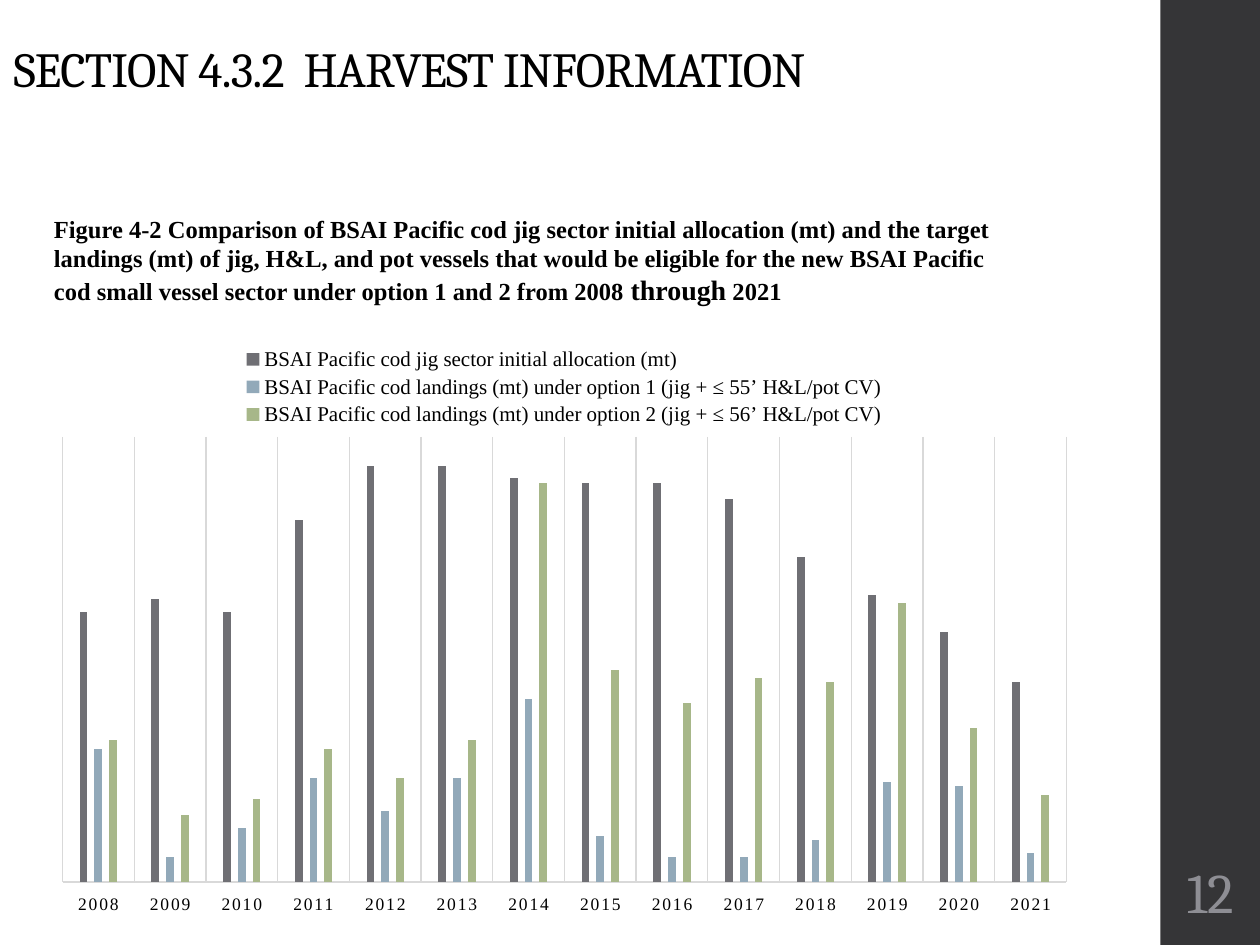
from dataclasses import dataclass

from lxml.etree import SubElement
from pptx import Presentation
from pptx.chart.data import CategoryChartData
from pptx.dml.color import RGBColor
from pptx.enum.chart import XL_CHART_TYPE as ChartType
from pptx.enum.chart import XL_LEGEND_POSITION as LegendPos
from pptx.enum.chart import XL_TICK_LABEL_POSITION as LabelPos
from pptx.enum.chart import XL_TICK_MARK as TickMark
from pptx.enum.shapes import MSO_SHAPE as Shape
from pptx.enum.text import MSO_ANCHOR as Anchor
from pptx.enum.text import PP_ALIGN as Align
from pptx.oxml import parse_xml
from pptx.oxml.ns import nsdecls, qn
from pptx.util import Inches, Pt


@dataclass(frozen=True)
class Theme:
    heading: str = "Cambria"
    body: str = "Times New Roman"
    ink: str = "000000"
    sidebar: str = "353537"
    muted: str = "8E8E94"
    grid: str = "D9D9D9"
    series: tuple = ("6F6F74", "92A9B9", "A7B789")
    title_size: int = 28
    number_size: int = 32
    caption_size: int = 14
    caption_large: int = 16
    legend_size: int = 12
    axis_size: int = 10


THEME = Theme()

YEARS = [str(year) for year in range(2008, 2022)]
SERIES = {
    "BSAI Pacific cod jig sector initial allocation (mt)":
        (65, 68, 65, 87, 100, 100, 97, 96, 96, 92, 78, 69, 60, 48),
    "BSAI Pacific cod landings (mt) under option 1 (jig + ≤ 55’ H&L/pot CV)":
        (32, 6, 13, 25, 17, 25, 44, 11, 6, 6, 10, 24, 23, 7),
    "BSAI Pacific cod landings (mt) under option 2 (jig + ≤ 56’ H&L/pot CV)":
        (34, 16, 20, 32, 25, 34, 96, 51, 43, 49, 48, 67, 37, 21),
}
CAPTION = (
    ("Figure 4-2 Comparison of BSAI Pacific cod jig sector initial allocation (mt) "
     "and the target landings (mt) of jig, H&L, and pot vessels that would be "
     "eligible for the new BSAI Pacific cod small vessel sector under option 1 "
     "and 2 from 2008 ", THEME.caption_size),
    ("through", THEME.caption_large),
    (" 2021", THEME.caption_size),
)


def box(left, top, width, height):
    return [Inches(v) for v in (left, top, width, height)]


def style_font(font, name, size, color=THEME.ink, bold=False):
    font.name, font.size, font.bold = name, Pt(size), bold
    font.color.rgb = RGBColor.from_string(color)


def add_sidebar(slide):
    sp = slide.shapes.add_shape(Shape.RECTANGLE, *box(9.21, 0, 0.8, 7.5))
    sp.shadow.inherit = False
    sp.fill.solid()
    sp.fill.fore_color.rgb = RGBColor.from_string(THEME.sidebar)
    sp.line.fill.background()


def add_text(slide, place, pieces, font, color=THEME.ink, bold=False, anchor=Anchor.TOP):
    """Add one paragraph made of (text, size) pieces and return its text frame."""
    tf = slide.shapes.add_textbox(*box(*place)).text_frame
    tf.word_wrap = True
    tf.vertical_anchor = anchor
    for text, size in pieces:
        r = tf.paragraphs[0].add_run()
        r.text = text
        style_font(r.font, font, size, color, bold)
    return tf


def add_title(slide):
    tf = add_text(slide, (0.01, 0.16, 9.59, 0.67),
                  [("SECTION 4.3.2  HARVEST INFORMATION", THEME.title_size)],
                  THEME.heading, anchor=Anchor.BOTTOM)
    p = tf.paragraphs[0]
    p.line_spacing = 0.9
    p.runs[0].font._element.set("spc", "-50")


def add_slide_number(slide):
    tf = add_text(slide, (9.23, 6.75, 0.75, 0.65), [("12", THEME.number_size)],
                  THEME.heading, THEME.muted, anchor=Anchor.MIDDLE)
    tf.margin_left = tf.margin_right = Inches(0.03)
    tf.paragraphs[0].alignment = Align.CENTER


def set_layout(parent, x, y, w, h, inner=False):
    """Place a chart part by fractions of the chart area."""
    for old in parent.findall(qn("c:layout")):
        parent.remove(old)
    layout = parse_xml(f"<c:layout {nsdecls('c')}/>")
    manual = SubElement(layout, qn("c:manualLayout"))
    settings = [("layoutTarget", "inner")] if inner else []
    settings += [("xMode", "edge"), ("yMode", "edge"),
                 ("x", x), ("y", y), ("w", w), ("h", h)]
    for tag, value in settings:
        SubElement(manual, qn(f"c:{tag}")).set("val", str(value))
    parent.insert(1 if parent.tag == qn("c:legend") else 0, layout)


def style_axes(chart):
    cat = chart.category_axis
    cat.major_tick_mark = cat.minor_tick_mark = TickMark.NONE
    cat.tick_label_position = LabelPos.LOW
    cat.has_major_gridlines = True
    for line in (cat.format.line, cat.major_gridlines.format.line):
        line.color.rgb = RGBColor.from_string(THEME.grid)
        line.width = Pt(0.75)
    font = cat.tick_labels.font
    style_font(font, THEME.body, THEME.axis_size)
    font._element.set("spc", "120")

    val = chart.value_axis
    val.minimum_scale, val.maximum_scale = 0, 107
    val.has_major_gridlines = False
    val.tick_labels.number_format = "#,##0"
    val.tick_labels.number_format_is_linked = False
    val.visible = False


def add_harvest_chart(slide):
    data = CategoryChartData()
    data.categories = YEARS
    for name, values in SERIES.items():
        data.add_series(name, values)
    chart = slide.shapes.add_chart(
        ChartType.COLUMN_CLUSTERED, *box(0.33, 2.63, 8.3, 4.65), data).chart
    chart.has_title = False
    style_font(chart.font, THEME.heading, THEME.axis_size)

    plot = chart.plots[0]
    plot.vary_by_categories = False
    plot.gap_width, plot.overlap = 444, -90
    for series, color in zip(plot.series, THEME.series):
        series.format.fill.solid()
        series.format.fill.fore_color.rgb = RGBColor.from_string(color)

    style_axes(chart)
    chart.has_legend = True
    legend = chart.legend
    legend.position = LegendPos.TOP
    legend.include_in_layout = False
    style_font(legend.font, THEME.body, THEME.legend_size)
    set_layout(legend._element, 0.19, 0.02, 0.62, 0.15)
    plot_area = chart._chartSpace.chart.plotArea
    set_layout(plot_area, 0.02, 0.18, 0.96, 0.76, inner=True)


def main():
    prs = Presentation()
    prs.slide_width, prs.slide_height = Inches(10), Inches(7.5)
    slide = prs.slides.add_slide(prs.slide_layouts[6])
    add_sidebar(slide)
    add_title(slide)
    add_slide_number(slide)
    add_harvest_chart(slide)
    add_text(slide, (0.33, 1.65, 7.76, 0.84), CAPTION, THEME.body, bold=True)
    prs.save("out.pptx")


if __name__ == "__main__":
    main()
